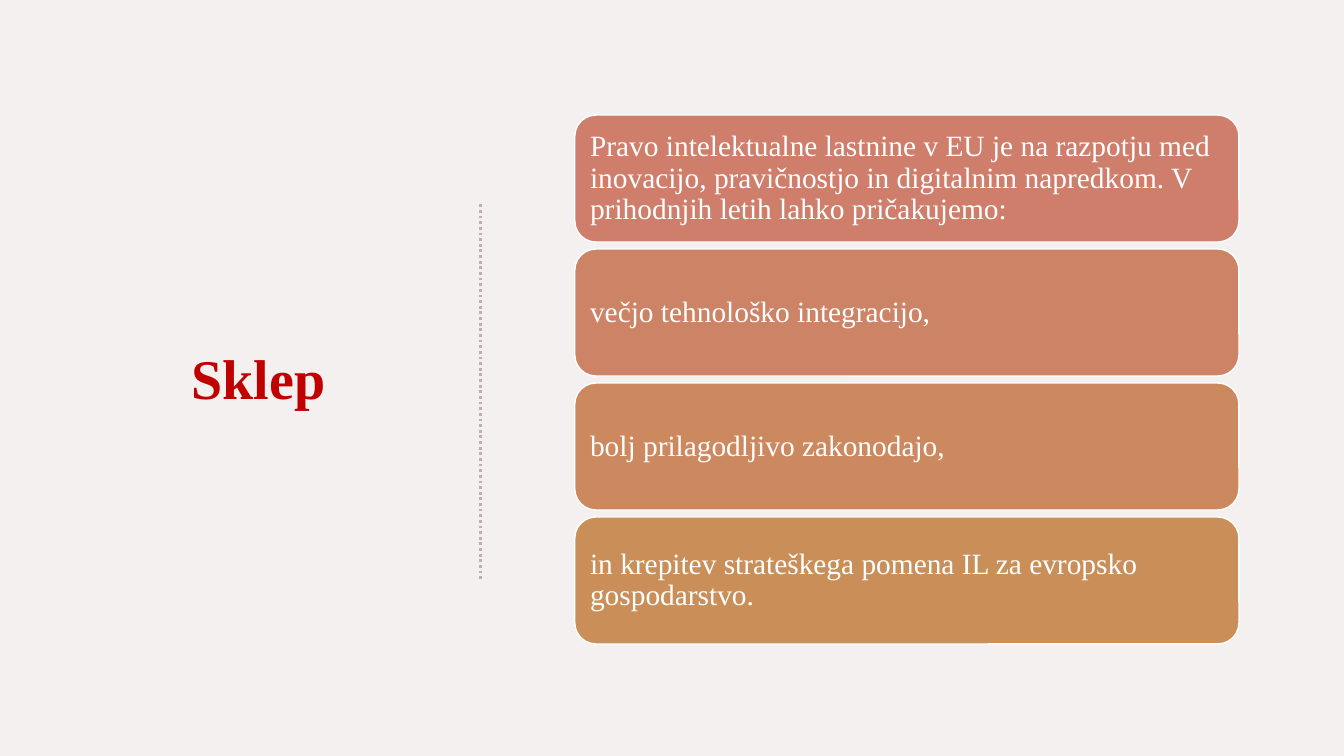
import pptx
import pptx.util
import pptx.dml.color
import pptx.enum.dml
import pptx.enum.shapes
import pptx.enum.text
import pptx.oxml.ns
import lxml.etree

Pt = pptx.util.Pt
Align = pptx.enum.text.PP_ALIGN


def color(code):
    return pptx.dml.color.RGBColor.from_string(code)


def write(shape, text, size, code, bold=False, align=Align.LEFT, space=1.0, inset=6.5):
    frame = shape.text_frame
    frame.word_wrap = True
    frame.vertical_anchor = pptx.enum.text.MSO_ANCHOR.MIDDLE
    frame.margin_left = frame.margin_right = Pt(inset)
    frame.margin_top = frame.margin_bottom = Pt(inset)
    para = frame.paragraphs[0]
    para.alignment = align
    para.line_spacing = space
    run = para.add_run()
    run.text = text
    run.font.name = "Times New Roman"
    run.font.size = Pt(size)
    run.font.bold = bold
    run.font.color.rgb = color(code)


deck = pptx.Presentation()
deck.slide_width = Pt(960)
deck.slide_height = Pt(540)
slide = deck.slides.add_slide(deck.slide_layouts[6])
slide.background.fill.solid()
slide.background.fill.fore_color.rgb = color("F3F0EF")

title = slide.shapes.add_textbox(Pt(75), Pt(124.5), Pt(219), Pt(290))
write(title, "Sklep", 40, "C00000", bold=True, align=Align.CENTER)

rule = slide.shapes.add_connector(
    pptx.enum.shapes.MSO_CONNECTOR.STRAIGHT, Pt(343.4), Pt(146), Pt(343.4), Pt(413.3))
rule.line.color.rgb = color("BFAFAA")
rule.line.width = Pt(2)
rule.line.dash_style = pptx.enum.dml.MSO_LINE.ROUND_DOT
props = rule.element.find(pptx.oxml.ns.qn("p:spPr"))
lxml.etree.SubElement(props, pptx.oxml.ns.qn("a:effectLst"))

points = [
    ("Pravo intelektualne lastnine v EU je na razpotju med inovacijo, pravičnostjo "
     "in digitalnim napredkom. V prihodnjih letih lahko pričakujemo:", "CF7E6C"),
    ("večjo tehnološko integracijo,", "CD8365"),
    ("bolj prilagodljivo zakonodajo,", "CC885F"),
    ("in krepitev strateškega pomena IL za evropsko gospodarstvo.", "CA8F58"),
]
top, high, pitch = 82.2, 90.7, 95.7
for row, (text, fill) in enumerate(points):
    card = slide.shapes.add_shape(
        pptx.enum.shapes.MSO_SHAPE.ROUNDED_RECTANGLE,
        Pt(410.6), Pt(top + row * pitch), Pt(474.4), Pt(high))
    card.shadow.inherit = False
    card.fill.solid()
    card.fill.fore_color.rgb = color(fill)
    card.line.color.rgb = color("FFFFFF")
    card.line.width = Pt(1)
    write(card, text, 21, "FFFFFF", space=0.9)

deck.save("out.pptx")
